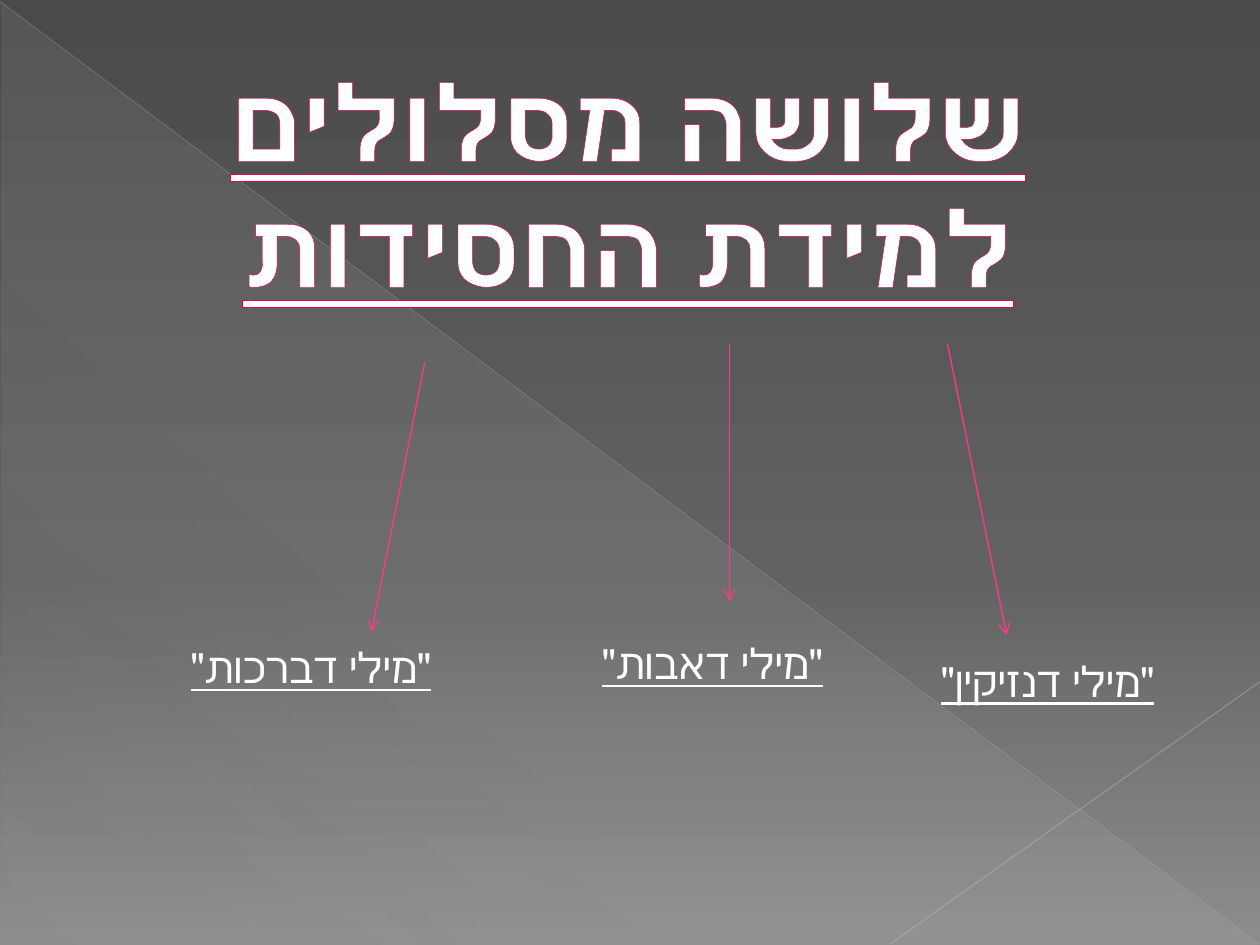
from dataclasses import dataclass

from lxml import etree
from pptx import Presentation
from pptx.dml.color import RGBColor
from pptx.enum.lang import MSO_LANGUAGE_ID
from pptx.enum.shapes import MSO_CONNECTOR, MSO_SHAPE
from pptx.enum.text import MSO_ANCHOR, MSO_AUTO_SIZE, PP_ALIGN
from pptx.oxml.ns import qn
from pptx.util import Cm, Pt

HEBREW = MSO_LANGUAGE_ID.HEBREW
STRAIGHT = MSO_CONNECTOR.STRAIGHT
RIGHT_TRIANGLE = MSO_SHAPE.RIGHT_TRIANGLE
MIDDLE, TOP = MSO_ANCHOR.MIDDLE, MSO_ANCHOR.TOP
FIT_SHAPE, FIXED = MSO_AUTO_SIZE.SHAPE_TO_FIT_TEXT, MSO_AUTO_SIZE.NONE
CENTER, RIGHT = PP_ALIGN.CENTER, PP_ALIGN.RIGHT


@dataclass(frozen=True)
class Theme:
    font: str = "League Spartan"
    text: str = "FFFFFF"
    outline: str = "E40059"
    arrow: str = "FF388C"
    diagonal: str = "BFBFBF"
    corner: str = "C6C6C6"
    background: tuple = ((0, "4A4A4A", 100), (60, "626262", 100), (100, "8C8C8C", 100))
    veil: tuple = ((0, "D2D2D2", 10), (70, "D2D2D2", 8), (100, "D2D2D2", 1))
    title_size: int = 60
    label_size: int = 24
    outline_width: float = 1.42
    arrow_width: float = 0.75


def apply_format(target, values):
    for name, value in values.items():
        setattr(target, name, value)


def add_color(parent, color, opacity=100):
    element = etree.SubElement(parent, qn("a:srgbClr"), val=color)
    if opacity < 100:
        etree.SubElement(element, qn("a:alpha"), val=str(opacity * 1000))


class SlideBuilder:
    def __init__(self, slide, theme):
        self.slide = slide
        self.theme = theme

    def gradient(self, fill, owner, stops, angle):
        fill.gradient()
        fill.gradient_angle = 360 - angle
        stop_list = owner.find(".//" + qn("a:gsLst"))
        for child in list(stop_list):
            stop_list.remove(child)
        for position, color, opacity in stops:
            stop = etree.SubElement(stop_list, qn("a:gs"), pos=str(position * 1000))
            add_color(stop, color, opacity)

    def background(self):
        self.gradient(self.slide.background.fill, self.slide.element, self.theme.background, 90)

    def veil(self, left, top, width, height):
        shape = self.slide.shapes.add_shape(
            RIGHT_TRIANGLE, Cm(left), Cm(top), Cm(width), Cm(height))
        shape.shadow.inherit = False
        shape.line.fill.background()
        self.gradient(shape.fill, shape.element, self.theme.veil, 133)

    def line(self, start, end, color, width, opacity=100, arrow=False):
        points = [Cm(value) for value in (*start, *end)]
        connector = self.slide.shapes.add_connector(STRAIGHT, *points)
        connector.line.width = Pt(width)
        connector.line.color.rgb = RGBColor.from_string(color)
        properties = connector.element.spPr
        if opacity < 100:
            color_element = properties.find(".//" + qn("a:srgbClr"))
            etree.SubElement(color_element, qn("a:alpha"), val=str(opacity * 1000))
        if arrow:
            etree.SubElement(properties.find(qn("a:ln")), qn("a:tailEnd"), type="arrow")
        etree.SubElement(properties, qn("a:effectLst"))

    def text(self, text, box, size, frame_format, alignment, bold=False):
        shape = self.slide.shapes.add_textbox(*[Cm(value) for value in box])
        apply_format(shape.text_frame, {"word_wrap": True, **frame_format})
        paragraph = shape.text_frame.paragraphs[0]
        paragraph.alignment = alignment
        paragraph_properties = paragraph._p.get_or_add_pPr()
        paragraph_properties.set("rtl", "1")
        run = paragraph.add_run()
        run.text = text
        apply_format(run.font, {"name": self.theme.font, "size": Pt(size), "bold": bold,
                                "underline": True, "language_id": HEBREW})
        run.font.color.rgb = RGBColor.from_string(self.theme.text)
        return paragraph_properties, run._r.get_or_add_rPr()

    def title(self, text, box, indent):
        paragraph_properties, run_properties = self.text(
            text, box, self.theme.title_size,
            {"vertical_anchor": MIDDLE, "auto_size": FIXED}, CENTER, bold=True)
        paragraph_properties.set("marL", str(Cm(indent)))
        paragraph_properties.set("indent", "0")
        outline = etree.Element(qn("a:ln"), w=str(Pt(self.theme.outline_width)))
        add_color(etree.SubElement(outline, qn("a:solidFill")), self.theme.outline)
        run_properties.insert(0, outline)

    def label(self, text, left, top, width):
        self.text(text, (left, top, width, 1.27), self.theme.label_size,
                  {"vertical_anchor": TOP, "auto_size": FIT_SHAPE}, RIGHT)

    def arrow(self, start, end):
        self.line(start, end, self.theme.arrow, self.theme.arrow_width, arrow=True)


def main():
    presentation = Presentation()
    apply_format(presentation, {"slide_width": Cm(25.4), "slide_height": Cm(19.05)})
    slide = presentation.slides.add_slide(presentation.slide_layouts[6])
    theme = Theme()
    builder = SlideBuilder(slide, theme)

    builder.background()
    builder.veil(0.03, 0.05, 25.35, 19)
    builder.line((0, 0.03), (25.37, 19.02), theme.diagonal, 0.39, opacity=35)
    builder.line((25.4, 13.74), (17.96, 19.02), theme.corner, 0.47, opacity=45)
    builder.title("שלושה מסלולים למידת החסידות", (1.9, 1.73, 22.86, 3.89), 1.35)

    tracks = (
        ('"מילי דנזיקין"', (18.11, 13.08, 5.41), (19.1, 6.93), (20.29, 12.8)),
        ('"מילי דאבות"', (11.63, 12.73, 5.21), (14.71, 6.93), (14.71, 12.12)),
        ('"מילי דברכות"', (2.69, 12.8, 6.25), (8.56, 7.32), (7.49, 12.73)),
    )
    for text, place, start, end in tracks:
        builder.label(text, *place)
        builder.arrow(start, end)

    presentation.save("out.pptx")


if __name__ == "__main__":
    main()
